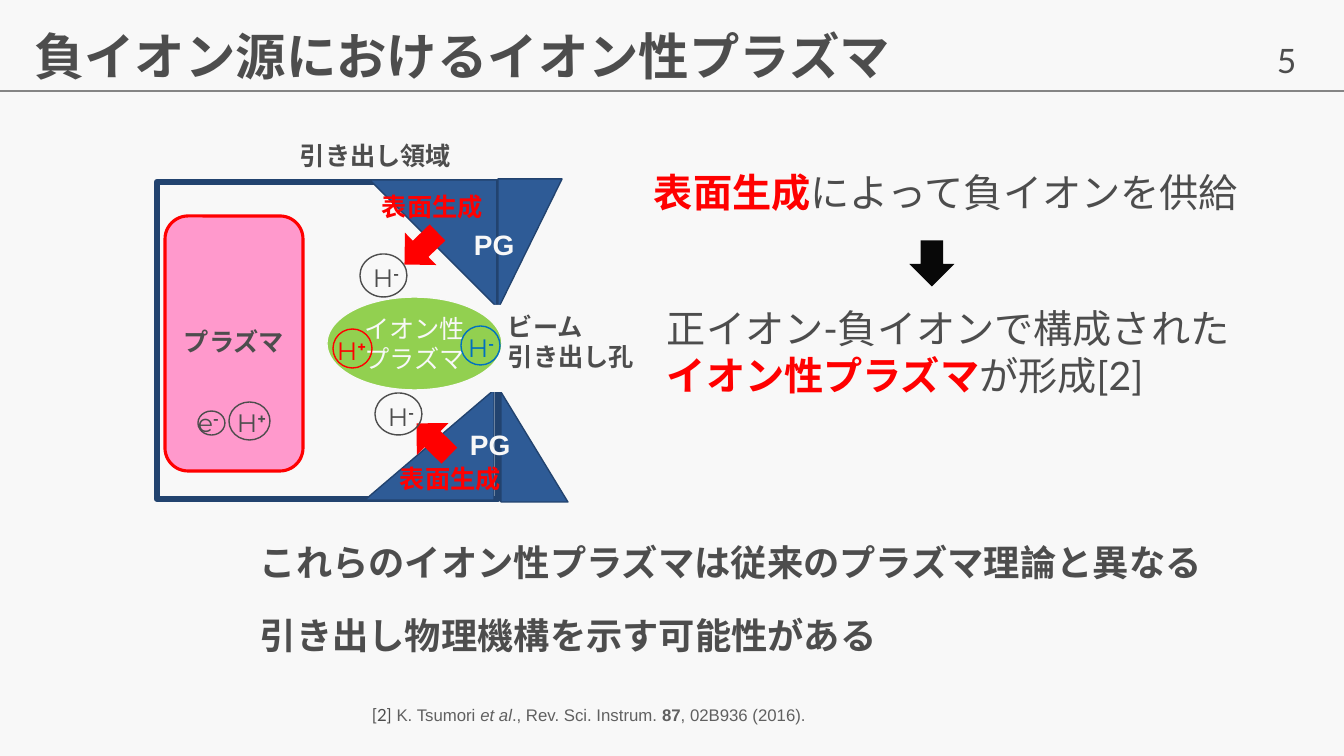
"""Builds a slide on ionic plasma in a negative ion source."""
from lxml.etree import SubElement
from pptx import Presentation
from pptx.dml.color import RGBColor
from pptx.enum.shapes import MSO_CONNECTOR, MSO_SHAPE
from pptx.enum.text import MSO_ANCHOR, MSO_AUTO_SIZE, PP_ALIGN
from pptx.oxml.ns import qn
from pptx.util import Pt

SCALE = 914400 / 100.8
COLORS = {
    "paper": "F8F8F8", "ink": "4D4D4D", "rule": "858585", "navy": "22436F",
    "blue": "2E5B96", "pink": "FF99CC", "red": "FF0000", "green": "92D050",
    "sky": "0070C0", "black": "080808", "gray": "606060",
}
GOTHIC = "Noto Sans CJK JP"
BOLD = {"name": GOTHIC, "size": Pt(18), "bold": True}
SURFACE = {**BOLD, "color": "red"}
LARGE = {"name": "Lato", "size": Pt(28)}
LARGE_RED = {**LARGE, "bold": True, "color": "red"}
GRID = {"name": "Arial", "size": Pt(20), "bold": True, "color": "paper"}
CITE = {"name": "Arial", "size": Pt(12), "color": "gray"}
CLOSING = {**BOLD, "size": Pt(25.9)}


def px(*lengths):
    """Turn pixel lengths into EMU."""
    return [round(length * SCALE) for length in lengths]


def color(name):
    """Look up a named colour."""
    return RGBColor.from_string(COLORS[name])


def assign(target, values):
    """Set every attribute given in a dict."""
    for key, value in values.items():
        setattr(target, key, value)


def write(frame, paragraphs, layout=None):
    """Fill a text frame with paragraphs made of (text, format) spans."""
    for index, spans in enumerate(paragraphs):
        para = frame.add_paragraph() if index else frame.paragraphs[0]
        assign(para, layout or {})
        for text, values in spans:
            span = para.add_run()
            span.text = text
            values = dict(values)
            baseline = values.pop("baseline", None)
            span.font.color.rgb = color(values.pop("color", "ink"))
            assign(span.font, values)
            if baseline:
                span.font._element.set("baseline", str(baseline))
            east_asian = SubElement(span.font._element, qn("a:ea"))
            east_asian.set("typeface", GOTHIC)


def add_text(page, box, paragraphs, layout=None, wrap=True):
    """Add a text box that grows with its text."""
    frame = page.shapes.add_textbox(*px(*box)).text_frame
    assign(frame, {"word_wrap": wrap, "auto_size": MSO_AUTO_SIZE.SHAPE_TO_FIT_TEXT})
    write(frame, paragraphs, layout)


def add_figure(page, kind, box, fill=None, line=None, width=1, turn=0, flip=""):
    """Add a preset shape with optional fill, outline, rotation and flips."""
    figure = page.shapes.add_shape(kind, *px(*box))
    figure.shadow.inherit = False
    figure.rotation = turn
    if fill:
        figure.fill.solid()
        figure.fill.fore_color.rgb = color(fill)
    else:
        figure.fill.background()
    if line:
        figure.line.color.rgb = color(line)
        figure.line.width = Pt(width)
    else:
        figure.line.fill.background()
    for axis in flip:
        figure._element.spPr.find(qn("a:xfrm")).set("flip" + axis, "1")
    return figure


def add_particle(page, circle, label, symbol, sign, tone="ink", wrap=False):
    """Add a circled particle symbol with its raised charge sign."""
    add_figure(page, MSO_SHAPE.OVAL, circle, line=tone)
    base = {"name": "Montserrat", "size": Pt(18), "color": tone}
    charge = {**base, "bold": True, "baseline": 30000}
    add_text(page, label, [[(symbol, base), (sign, charge)]], wrap=wrap)


def add_header(page):
    """Add the title, page number and rule."""
    title = page.shapes.title
    assign(title, dict(zip(("left", "top", "width", "height"), px(24, 7, 1224, 104))))
    assign(title.text_frame, {"vertical_anchor": MSO_ANCHOR.MIDDLE, "word_wrap": True})
    write(title.text_frame, [[("負イオン源におけるイオン性プラズマ", {**BOLD, "size": Pt(36)})]],
          {"alignment": PP_ALIGN.LEFT, "line_spacing": 0.9})
    number = {"name": "Lato", "size": Pt(24)}
    add_text(page, (1267, 35, 61, 50), [[("5", number)]], wrap=False)
    rule = page.shapes.add_connector(MSO_CONNECTOR.STRAIGHT, *px(0, 91, 1344, 91))
    rule.line.color.rgb = color("rule")
    rule.line.width = Pt(1)
    SubElement(rule._element.spPr, qn("a:effectLst"))


def add_source(page):
    """Draw the ion source with its chamber, grid and particles."""
    add_figure(page, MSO_SHAPE.RECTANGLE, (157, 182, 341, 317), None, "navy", 4.5)
    add_figure(page, MSO_SHAPE.ROUNDED_RECTANGLE, (165, 216, 138, 255), "pink", "red", 2.25)
    for box, flip in (
        ((498, 179, 64, 130), "V"),
        ((501, 392, 67, 110), ""),
        ((370, 180, 127, 127), "HV"),
        ((365, 390, 129, 110), "H"),
    ):
        add_figure(page, MSO_SHAPE.RIGHT_TRIANGLE, box, "blue", "navy", flip=flip)
    add_figure(page, MSO_SHAPE.RECTANGLE, (486, 305, 19, 87), "paper")
    for box, turn in (((398, 226, 46, 45), 315.9), ((410, 417, 46, 45), 44.6)):
        add_figure(page, MSO_SHAPE.LEFT_ARROW, box, "red", turn=turn)

    ionic = add_figure(page, MSO_SHAPE.OVAL, (327, 297, 175, 93), "green", "paper")
    assign(ionic.text_frame, {"word_wrap": True, "vertical_anchor": MSO_ANCHOR.MIDDLE})
    write(ionic.text_frame, [[("イオン性プラズマ", {**BOLD, "bold": False, "color": "paper"})]],
          {"alignment": PP_ALIGN.CENTER})

    for box, lines, style in (
        ((174, 321, 122, 40), ["プラズマ"], BOLD),
        ((372, 186, 122, 40), ["表面生成"], SURFACE),
        ((390, 458, 122, 40), ["表面生成"], SURFACE),
        ((460, 423, 86, 44), ["PG"], GRID),
        ((464, 223, 86, 44), ["PG"], GRID),
        ((498, 306, 155, 72), ["ビーム", "引き出し孔"], BOLD),
        ((290, 135, 175, 40), ["引き出し領域"], BOLD),
    ):
        add_text(page, box, [[(line, style)] for line in lines])

    for particle in (
        ((360, 254, 47, 43), (363, 257, 47, 40), "H", "-"),
        ((375, 393, 47, 42), (378, 396, 47, 40), "H", "-"),
        ((198, 411, 27, 24), (188, 402, 53, 40), "e", "-", "ink", True),
        ((229, 402, 41, 38), (227, 402, 53, 40), "H", "+", "ink", True),
        ((333, 329, 39, 39), (327, 330, 53, 40), "H", "+", "red", True),
        ((461, 326, 39, 39), (458, 327, 47, 40), "H", "-", "sky"),
    ):
        add_particle(page, *particle)


def add_explanation(page):
    """Add the explanation, closing statement and citation."""
    add_text(page, (644, 163, 672, 57),
             [[("表面生成", LARGE_RED), ("によって負イオンを供給", LARGE)]])
    add_figure(page, MSO_SHAPE.LEFT_ARROW, (909, 241, 46, 45), "black", turn=270)
    add_text(page, (657, 299, 672, 105), [
        [("正イオン-負イオンで構成された", LARGE)],
        [("イオン性プラズマ", LARGE_RED), ("が形成[2]", LARGE)],
    ])
    add_text(page, (250, 531, 1030, 153), [
        [("これらのイオン性プラズマは従来のプラズマ理論と異なる", CLOSING)],
        [("引き出し物理機構を示す可能性がある", CLOSING)],
    ], {"line_spacing": 1.1, "space_before": Pt(18)})
    add_text(page, (362, 700, 541, 30), [[
        ("[2]", {**CITE, "name": "Lato", "color": "ink"}),
        (" K. Tsumori ", CITE),
        ("et al", {**CITE, "italic": True}),
        ("., Rev. Sci. Instrum. ", CITE),
        ("87", {**CITE, "bold": True}),
        (", 02B936 (2016).", CITE),
    ]])


def main():
    """Build and save the deck."""
    deck = Presentation()
    deck.slide_width, deck.slide_height = px(1344, 756)
    page = deck.slides.add_slide(deck.slide_layouts[5])
    page.background.fill.solid()
    page.background.fill.fore_color.rgb = color("paper")
    add_header(page)
    add_source(page)
    add_explanation(page)
    deck.save("out.pptx")


if __name__ == "__main__":
    main()
